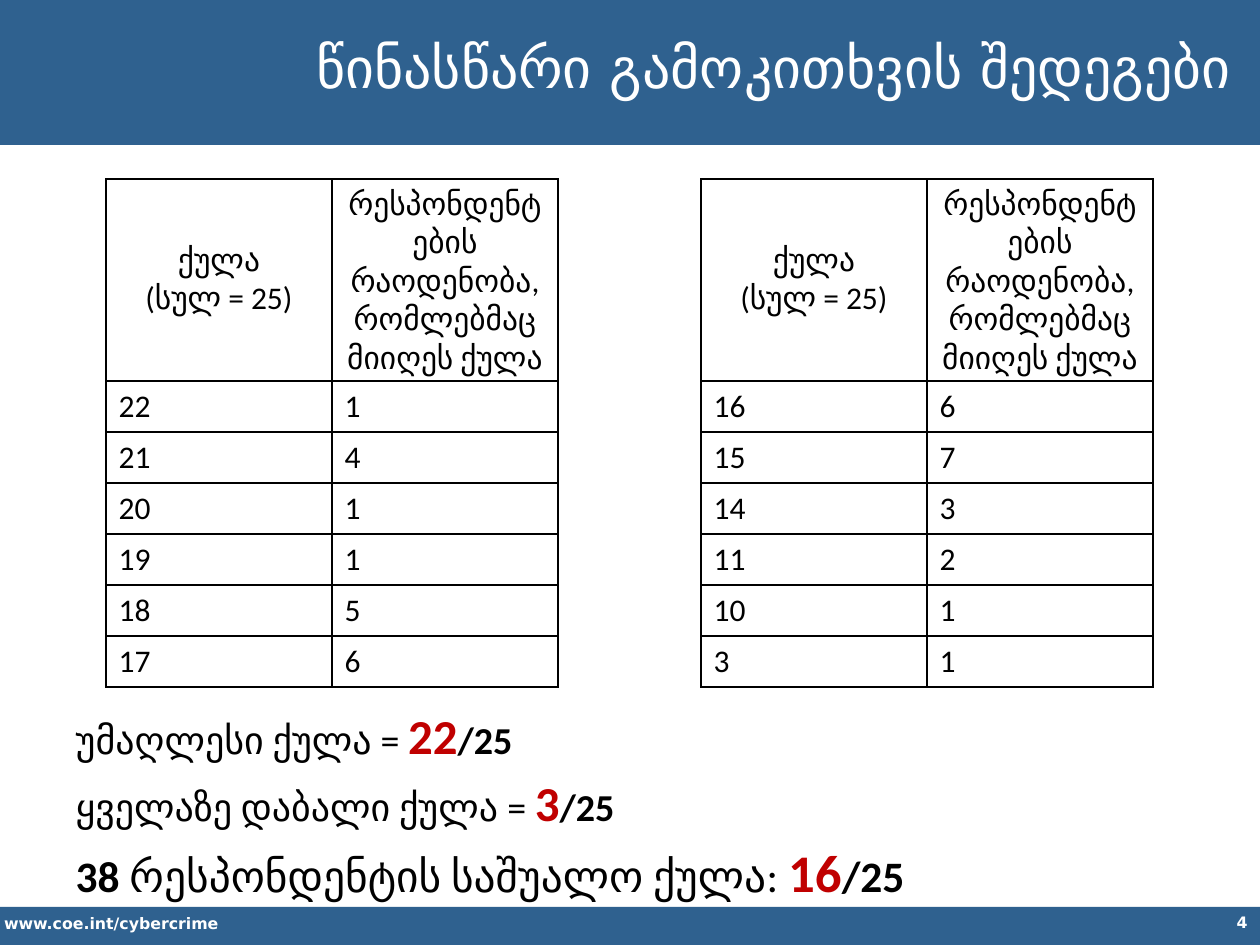
from lxml import etree
from pptx import Presentation
from pptx.dml.color import RGBColor
from pptx.enum.shapes import MSO_SHAPE
from pptx.enum.text import MSO_ANCHOR, MSO_AUTO_SIZE, PP_ALIGN
from pptx.oxml.ns import qn
from pptx.util import Emu, Pt

RECT = MSO_SHAPE.RECTANGLE
TOP, MIDDLE = MSO_ANCHOR.TOP, MSO_ANCHOR.MIDDLE
LEFT, CENTER, RIGHT = PP_ALIGN.LEFT, PP_ALIGN.CENTER, PP_ALIGN.RIGHT
FIXED = MSO_AUTO_SIZE.NONE

BLUE = RGBColor(0x2F, 0x61, 0x8F)
RED = RGBColor(0xC0, 0x00, 0x00)
BLACK = RGBColor(0x00, 0x00, 0x00)
WHITE = RGBColor(0xFF, 0xFF, 0xFF)
SANS, BODY = "DejaVu Sans", "Calibri"

HEADS = [["ქულა", "(სულ = 25)"],
         ["რესპონდენტების რაოდენობა, რომლებმაც მიიღეს ქულა"]]
HIGH = [(22, 1), (21, 4), (20, 1), (19, 1), (18, 5), (17, 6)]
LOW = [(16, 6), (15, 7), (14, 3), (11, 2), (10, 1), (3, 1)]
TOTALS = [
    [("უმაღლესი ქულა = ", 21.7, BLACK, False),
     ("22", 27.9, RED, True), ("/25", 21.7, BLACK, True)],
    [("ყველაზე დაბალი ქულა = ", 21.7, BLACK, False),
     ("3", 27.9, RED, True), ("/25", 21.7, BLACK, True)],
    [("38", 24.8, BLACK, True),
     (" რესპონდენტის საშუალო ქულა: ", 24.8, BLACK, False),
     ("16", 30.2, RED, True), ("/25", 24.8, BLACK, True)],
]


def px(n):
    return Emu(n * 914400 // 126)


def place(shape, box):
    shape.left, shape.top, shape.width, shape.height = map(px, box)


def add_run(para, text, size, color, bold=False, face=BODY):
    run = para.add_run()
    run.text = text
    font = run.font
    font.name, font.size, font.bold = face, Pt(size), bold
    font.color.rgb = color


def add_bar(slide, box):
    bar = slide.shapes.add_shape(RECT, *map(px, box))
    bar.shadow.inherit = False
    bar.fill.solid()
    bar.fill.fore_color.rgb = BLUE
    bar.line.fill.background()
    slide.shapes._spTree.insert(2, bar._element)


def add_label(slide, box, text, align):
    label = slide.shapes.add_textbox(*map(px, box))
    frame = label.text_frame
    frame.word_wrap = True
    para = frame.paragraphs[0]
    para.alignment = align
    add_run(para, text, 9, WHITE, True, SANS)
    return frame


def add_header(slide, box):
    x, y, w, h = box
    add_bar(slide, box)
    title = slide.shapes.title
    place(title, (x + 193, y + 26, w - 208, 81))
    frame = title.text_frame
    frame.auto_size = FIXED
    frame.vertical_anchor = MIDDLE
    para = frame.paragraphs[0]
    para.alignment = RIGHT
    add_run(para, "წინასწარი გამოკითხვის შედეგები", 32, WHITE, face=SANS)


def add_footer(slide, box):
    x, y, w, h = box
    add_bar(slide, box)
    site = add_label(slide, (x, y + 1, 435, 32), "www.coe.int/cybercrime", LEFT)
    site.margin_left = px(4)
    add_label(slide, (x + w - 284, y, 284, h), "4", RIGHT)


def style_cell(cell):
    props = cell._tc.get_or_add_tcPr()
    for side in ("lnL", "lnR", "lnT", "lnB"):
        line = etree.SubElement(props, qn("a:" + side), w=str(Pt(1)))
        fill = etree.SubElement(line, qn("a:solidFill"))
        etree.SubElement(fill, qn("a:srgbClr"), val=str(BLACK))
    cell.fill.background()


def fill_cell(cell, lines, align):
    style_cell(cell)
    frame = cell.text_frame
    for i, text in enumerate(lines):
        para = frame.add_paragraph() if i else frame.paragraphs[0]
        para.alignment = align
        add_run(para, text, 18, BLACK)


def add_scores(slide, box, scores):
    x, y, w, h = box
    rows = len(scores) + 1
    table = slide.shapes.add_table(rows, 2, *map(px, box)).table
    table.first_row = table.horz_banding = False
    for col in table.columns:
        col.width = px(w // 2)
    for row in table.rows:
        row.height = px(51)
    table.rows[0].height = px(h - 51 * len(scores))
    for c, lines in enumerate(HEADS):
        cell = table.cell(0, c)
        fill_cell(cell, lines, CENTER)
        cell.vertical_anchor = MIDDLE
    for r, pair in enumerate(scores, 1):
        for c, value in enumerate(pair):
            fill_cell(table.cell(r, c), [str(value)], LEFT)


def add_totals(slide, box):
    body = slide.placeholders[1]
    place(body, box)
    frame = body.text_frame
    frame.auto_size = FIXED
    frame.vertical_anchor = TOP
    for i, parts in enumerate(TOTALS):
        para = frame.add_paragraph() if i else frame.paragraphs[0]
        props = para._p.get_or_add_pPr()
        props.set("marL", str(px(70)))
        props.set("indent", str(-px(70)))
        etree.SubElement(props, qn("a:buNone"))
        para.space_before = Pt(5 if i else 0)
        for part in parts:
            add_run(para, *part)


def main():
    deck = Presentation()
    deck.slide_width, deck.slide_height = px(1260), px(945)
    slide = deck.slides.add_slide(deck.slide_layouts[1])
    add_header(slide, (0, 0, 1260, 145))
    add_footer(slide, (0, 907, 1260, 38))
    add_totals(slide, (63, 699, 1134, 199))
    for x, scores in ((106, HIGH), (701, LOW)):
        add_scores(slide, (x, 179, 452, 508), scores)
    deck.save("out.pptx")


if __name__ == "__main__":
    main()
